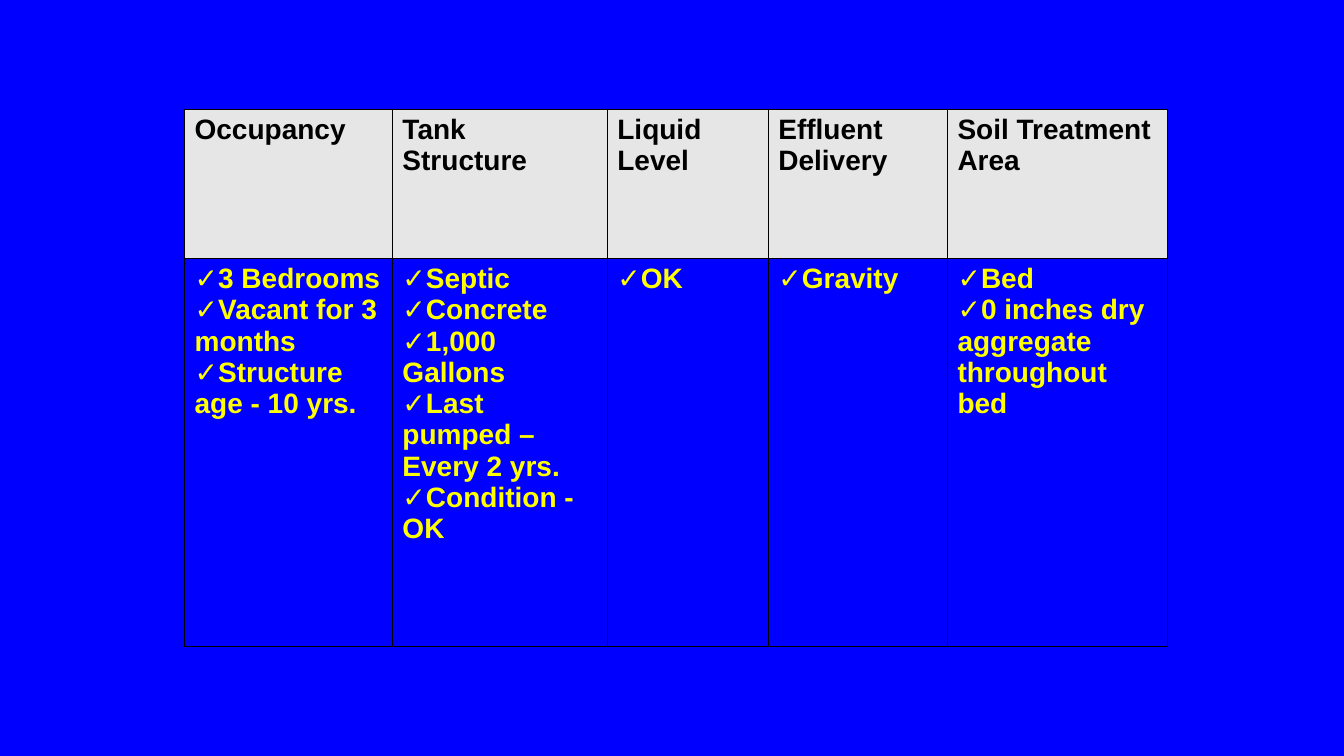
from dataclasses import dataclass

from lxml import etree
from pptx import Presentation
from pptx import util as u
from pptx.dml import color
from pptx.oxml import ns
from pptx.table import _Cell

HUES = {"back": "0000FF", "head": "E6E6E6", "title": "000000",
        "item": "FFFF00", "rule": "000000"}
LEFT, TOP = u.Pt(131.8), u.Pt(78)
HEAD, BODY = u.Pt(106.5), u.Pt(277.5)


@dataclass
class Topic:
    title: str
    width: float
    items: list[str]


TOPICS = [
    Topic("Occupancy", 148.5,
          ["3 Bedrooms", "Vacant for 3 months", "Structure age - 10 yrs."]),
    Topic("Tank Structure", 153.5,
          ["Septic", "Concrete", "1,000 Gallons",
           "Last pumped – Every 2 yrs.", "Condition - OK"]),
    Topic("Liquid Level", 115, ["OK"]),
    Topic("Effluent Delivery", 128, ["Gravity"]),
    Topic("Soil Treatment Area", 157,
          ["Bed", "0 inches dry aggregate throughout bed"]),
]


def rgb(name: str) -> color.RGBColor:
    return color.RGBColor.from_string(HUES[name])


def add(root, tag: str, **attrs: str):
    return etree.SubElement(root, ns.qn(tag), **attrs)


def rule(cell: _Cell) -> None:
    """Draw a thin line on all four sides of a cell."""
    props = cell._tc.get_or_add_tcPr()
    for side in "LRTB":
        line = add(props, f"a:ln{side}", w=str(u.Pt(1)))
        add(add(line, "a:solidFill"), "a:srgbClr", val=HUES["rule"])


def check(para) -> None:
    """Put a check mark in front of a paragraph."""
    props = para._p.get_or_add_pPr()
    props.set("marL", "0")
    props.set("indent", "0")
    add(props, "a:buFont", typeface="Arial")
    add(props, "a:buChar", char="✓")
    add(add(props, "a:tabLst"), "a:tab", pos=str(u.Pt(18)), algn="l")


def write(cell: _Cell, lines: list[str], hue: str, marked: bool) -> None:
    rule(cell)
    frame = cell.text_frame
    frame.text = "\n".join(lines)
    for para in frame.paragraphs:
        if marked:
            check(para)
        for run in para.runs:
            font = run.font
            font.name, font.size, font.bold = "Arial", u.Pt(20), True
            font.color.rgb = rgb(hue)


def main() -> None:
    deck = Presentation()
    deck.slide_width, deck.slide_height = u.Pt(960), u.Pt(540)
    slide = deck.slides.add_slide(deck.slide_layouts[6])
    slide.background.fill.solid()
    slide.background.fill.fore_color.rgb = rgb("back")

    # Table grid
    width = u.Pt(sum(topic.width for topic in TOPICS))
    table = slide.shapes.add_table(
        2, len(TOPICS), LEFT, TOP, width, HEAD + BODY).table
    table.first_row = table.horz_banding = False
    table.rows[0].height, table.rows[1].height = HEAD, BODY

    # One column per topic
    for col, topic in enumerate(TOPICS):
        table.columns[col].width = u.Pt(topic.width)
        head, body = table.cell(0, col), table.cell(1, col)
        write(head, [topic.title], "title", False)
        head.fill.solid()
        head.fill.fore_color.rgb = rgb("head")
        write(body, topic.items, "item", True)
        body.fill.background()

    deck.save("out.pptx")


if __name__ == "__main__":
    main()
